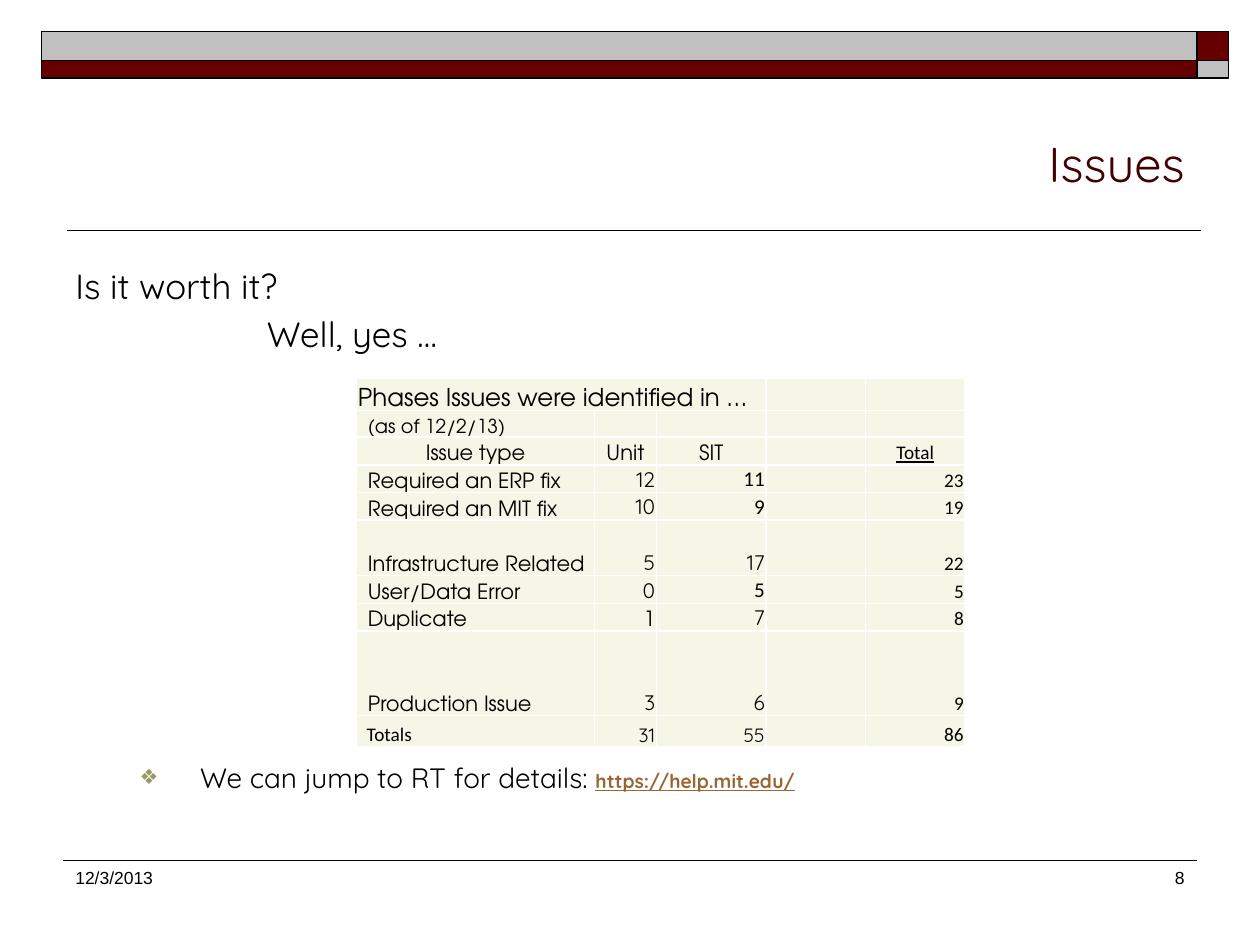
"""Build the Issues slide with its table of issue counts by test phase."""
from lxml import etree
from pptx import Presentation
from pptx import util as u
from pptx.dml import color
from pptx.enum import shapes, text
from pptx.oxml import ns

BODY, TABLE, NUMERIC, PLAIN = "Quicksand", "TeX Gyre Adventor", "Calibri", "Arial"
BLACK, MAROON, SILVER, CREAM, WHITE = "000000", "660000", "C0C0C0", "F6F6E7", "FFFFFF"
LEFT, CENTER, RIGHT = text.PP_ALIGN.LEFT, text.PP_ALIGN.CENTER, text.PP_ALIGN.RIGHT


def rgb(hex_color):
    return color.RGBColor.from_string(hex_color)


def child(parent, tag, **attributes):
    return etree.SubElement(parent, ns.qn(tag), **attributes)


class Deck:
    def __init__(self, width, height):
        self.presentation = Presentation()
        self.presentation.slide_width = u.Inches(width)
        self.presentation.slide_height = u.Inches(height)
        self.slide = self.presentation.slides.add_slide(self.presentation.slide_layouts[6])

    def style(self, paragraph, face, size, hue=BLACK, align=LEFT):
        paragraph.alignment = align
        font = paragraph.font
        font.name, font.size = face, u.Pt(size)
        font.color.rgb = rgb(hue)

    def rule(self, left, right, top, weight):
        line = self.slide.shapes.add_connector(
            shapes.MSO_CONNECTOR.STRAIGHT,
            u.Inches(left), u.Inches(top), u.Inches(right), u.Inches(top))
        line.line.color.rgb = rgb(BLACK)
        line.line.width = u.Pt(weight)
        child(line._element.spPr, "a:effectLst")

    def bar(self, left, top, width, height, fill):
        bar = self.slide.shapes.add_shape(
            shapes.MSO_SHAPE.RECTANGLE, *map(u.Inches, (left, top, width, height)))
        bar.shadow.inherit = False
        bar.fill.solid()
        bar.fill.fore_color.rgb = rgb(fill)
        bar.line.color.rgb = rgb(BLACK)
        bar.line.width = u.Pt(1)

    def frame(self, left, top, width, height, anchor=text.MSO_ANCHOR.TOP):
        frame = self.slide.shapes.add_textbox(
            *map(u.Inches, (left, top, width, height))).text_frame
        frame.word_wrap = True
        frame.vertical_anchor = anchor
        return frame

    def label(self, words, box, face, size, hue=BLACK, align=LEFT, anchor=text.MSO_ANCHOR.TOP):
        paragraph = self.frame(*box, anchor).paragraphs[0]
        paragraph.text = words
        self.style(paragraph, face, size, hue, align)

    def indent(self, paragraph, margin, hanging=0):
        properties = paragraph._p.get_or_add_pPr()
        properties.set("marL", str(u.Inches(margin)))
        properties.set("indent", str(-u.Inches(hanging)))
        return properties

    def bullet(self, paragraph, margin, hanging, symbol, hue):
        properties = self.indent(paragraph, margin, hanging)
        child(child(properties, "a:buClr"), "a:srgbClr", val=hue)
        child(properties, "a:buSzPct", val="75000")
        child(properties, "a:buFont", typeface=PLAIN)
        child(properties, "a:buChar", char=symbol)

    def table(self, left, top, widths, heights):
        table = self.slide.shapes.add_table(
            len(heights), len(widths), u.Inches(left), u.Inches(top),
            u.Inches(sum(widths)), u.Inches(sum(heights))).table
        table.first_row = table.horz_banding = False
        for column, width in zip(table.columns, widths):
            column.width = u.Inches(width)
        for row, height in zip(table.rows, heights):
            row.height = u.Inches(height)
        return table

    def cell(self, cell, words, face, size, align=LEFT, inset=0.01, underline=False):
        cell.margin_left, cell.margin_right = u.Inches(inset), u.Inches(0.01)
        cell.margin_top, cell.margin_bottom = u.Inches(0.01), 0
        cell.vertical_anchor = text.MSO_ANCHOR.BOTTOM
        for side in ("a:lnL", "a:lnR", "a:lnT", "a:lnB"):
            border = child(cell._tc.get_or_add_tcPr(), side, w=str(u.Pt(1)))
            child(child(border, "a:solidFill"), "a:srgbClr", val=WHITE)
        cell.fill.solid()
        cell.fill.fore_color.rgb = rgb(CREAM)
        paragraph = cell.text_frame.paragraphs[0]
        paragraph.text = words
        self.style(paragraph, face, size, align=align)
        if underline:
            paragraph.font.underline = True


def add_master_parts(deck):
    deck.rule(0.53, 9.53, 1.83, 1)
    for top, height, wide, corner in ((0.25, 0.23, SILVER, MAROON), (0.48, 0.14, MAROON, SILVER)):
        deck.bar(9.5, top, 0.25, height, corner)
        deck.bar(0.33, top, 9.17, height, wide)
    deck.rule(0.5, 9.5, 6.83, 0.75)
    deck.label("12/3/2013", (0.5, 6.83, 1.83, 0.5), PLAIN, 10)
    deck.label("8", (7.42, 6.83, 2.08, 0.5), PLAIN, 10, align=RIGHT)


def add_body(deck):
    body = deck.frame(0.5, 2.05, 9, 4.7)
    question, answer, details = body.paragraphs[0], body.add_paragraph(), body.add_paragraph()
    question.text = "Is it worth it?"
    answer.text = "Well, yes …"
    answer.space_before = u.Pt(3.6)
    deck.indent(answer, 1.52)
    details.line_spacing = 0.9
    details.space_before = u.Pt(234)
    deck.bullet(details, 0.99, 0.48, "❖", "999966")
    for paragraph, size in ((question, 20), (answer, 20), (details, 16)):
        deck.style(paragraph, BODY, size)
    details.add_run().text = "We can jump to RT for details: "
    address = details.add_run()
    address.text = "https://help.mit.edu/"
    address.font.size = u.Pt(11)
    address.font.bold = address.font.underline = True
    address.font.color.rgb = rgb("996633")


def add_issue_table(deck):
    issues = [
        ("Required an ERP fix", "12", "11", "23", BODY, NUMERIC),
        ("Required an MIT fix", "10", "9", "19", BODY, NUMERIC),
        ("Infrastructure Related", "5", "17", "22", BODY, BODY),
        ("User/Data Error", "0", "5", "5", BODY, NUMERIC),
        ("Duplicate", "1", "7", "8", TABLE, BODY),
        ("Production Issue", "3", "6", "9", BODY, BODY),
    ]
    blank = ("", TABLE, 10)
    rows = [
        [("Phases Issues were identified in …", TABLE, 14)] + [blank] * 4,
        [("(as of 12/2/13)", TABLE, 11, LEFT, 0.09)] + [blank] * 4,
        [(head, TABLE, 12, CENTER, 0.01, True) for head in ("Issue type", "Unit", "SIT")]
        + [blank, ("Total", NUMERIC, 11, CENTER, 0.01, True)],
    ]
    for issue, unit, sit, total, unit_face, sit_face in issues:
        rows.append([(issue, TABLE, 12, LEFT, 0.09), (unit, unit_face, 12, RIGHT),
                     (sit, sit_face, 12, RIGHT), blank, (total, NUMERIC, 11, RIGHT)])
    rows.append([("Totals", NUMERIC, 11, LEFT, 0.08), ("31", BODY, 11, RIGHT),
                 ("55", BODY, 11, RIGHT), blank, ("86", NUMERIC, 11, RIGHT)])

    heights = [0.26, 0.21, 0.22, 0.22, 0.22, 0.44, 0.22, 0.22, 0.67, 0.25]
    table = deck.table(2.83, 3, [1.89, 0.49, 0.87, 0.79, 0.79], heights)
    for row, entries in enumerate(rows):
        for column, entry in enumerate(entries):
            deck.cell(table.cell(row, column), *entry)
    table.cell(0, 0).merge(table.cell(0, 2))


def main():
    deck = Deck(10, 7.5)
    add_master_parts(deck)
    deck.label("Issues", (0.5, 0.58, 9, 1), BODY, 28, "420000", RIGHT, text.MSO_ANCHOR.BOTTOM)
    add_body(deck)
    add_issue_table(deck)
    deck.presentation.save("out.pptx")


if __name__ == "__main__":
    main()
